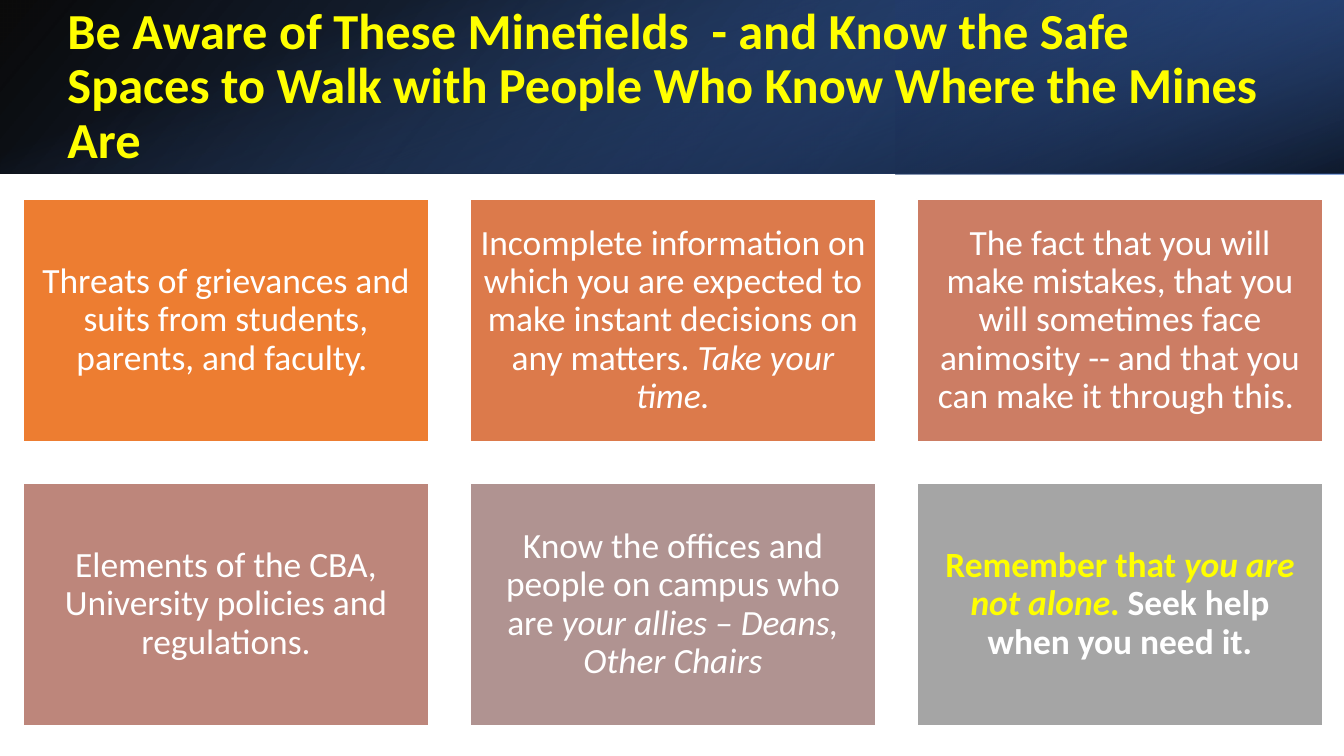
from dataclasses import dataclass

from lxml import etree
from pptx import Presentation
from pptx import util as u
from pptx.dml.color import RGBColor
from pptx.enum import shapes, text
from pptx.oxml.ns import qn

PX = 914400 / 134.4
WIDTH, HEIGHT = 1344, 756
BAND_HEIGHT = 174
FONT = "Calibri"
WHITE, YELLOW = "FFFFFF", "FFFF00"


@dataclass
class Stop:
    position: float
    color: str
    alpha: int


@dataclass
class Band:
    left: int
    top: int
    width: int
    height: int
    rotation: int
    flipped: bool
    angle: int
    stops: tuple[Stop, Stop]


@dataclass
class Span:
    words: str
    color: str = WHITE
    bold: bool = False
    italic: bool = False


@dataclass
class Card:
    fill: str
    spans: list[Span]


BANDS = [
    Band(0, 0, WIDTH, BAND_HEIGHT, 0, True, 140,
         (Stop(0, "000000", 96), Stop(1, "2F5597", 100))),
    Band(896, 0, 448, BAND_HEIGHT, 180, True, 320,
         (Stop(0.19, "203864", 68), Stop(1, "4472C4", 79))),
    # Upright strip turned a quarter to lie across the header
    Band(585, -585, BAND_HEIGHT, WIDTH, 90, False, 340,
         (Stop(0.23, "4472C4", 0), Stop(0.99, "000000", 74))),
]

TITLE = ("Be Aware of These Minefields  - and Know the Safe Spaces to Walk "
         "with People Who Know Where the Mines Are ")

CARDS = [
    Card("ED7D31", [Span("Threats of grievances and suits from students, "
                         "parents, and faculty. ")]),
    Card("DC7A4B", [Span("Incomplete information on which you are expected to "
                         "make instant decisions on any matters. "),
                    Span("Take your time.", italic=True)]),
    Card("CC7D64", [Span("The fact that you will make mistakes, that you will "
                         "sometimes face animosity -- and that you can make it "
                         "through this. ")]),
    Card("BD867B", [Span("Elements of the CBA, University policies and "
                         "regulations.")]),
    Card("B09391", [Span("Know the offices and people on campus who are "),
                    Span("your allies – Deans, Other Chairs", italic=True)]),
    Card("A5A5A5", [Span("Remember that ", YELLOW, bold=True),
                    Span("you are not alone", YELLOW, bold=True, italic=True),
                    Span(".", YELLOW, bold=True),
                    Span(" Seek help when you need it.", bold=True)]),
]
COLUMNS = 3
CARD_LEFT, CARD_TOP = 23, 199
CARD_WIDTH, CARD_HEIGHT = 406, 243
COLUMN_STEP, ROW_STEP = 447, 284


def px(length: int) -> u.Emu:
    return u.Emu(round(length * PX))


def rgb(color: str) -> RGBColor:
    return RGBColor.from_string(color)


def add_rectangle(page, left: int, top: int, width: int, height: int):
    shape = page.shapes.add_shape(shapes.MSO_SHAPE.RECTANGLE, px(left), px(top),
                                  px(width), px(height))
    shape.shadow.inherit = False
    return shape


def add_text(para, words: str, *, size: int, color: str = WHITE,
             bold: bool = False, italic: bool = False) -> None:
    run = para.add_run()
    run.text = words
    run.font.name = FONT
    run.font.size = u.Pt(size)
    run.font.bold = bold
    run.font.italic = italic
    run.font.color.rgb = rgb(color)


def draw_band(page, band: Band) -> None:
    shape = add_rectangle(page, band.left, band.top, band.width, band.height)
    shape.rotation = band.rotation
    shape.line.fill.background()
    if band.flipped:
        shape._element.spPr.find(qn("a:xfrm")).set("flipH", "1")
    shape.fill.gradient()
    shape.fill.gradient_angle = 360 - band.angle
    for target, stop in zip(shape.fill.gradient_stops, band.stops):
        target.position = stop.position
        target.color.rgb = rgb(stop.color)
    # Transparency of each gradient stop
    for node, stop in zip(shape._element.spPr.iter(qn("a:srgbClr")), band.stops):
        etree.SubElement(node, qn("a:alpha")).set("val", str(stop.alpha * 1000))


def draw_title(page) -> None:
    title = page.shapes.title
    title.left, title.top = px(54), px(39)
    title.width, title.height = px(1228), px(97)
    frame = title.text_frame
    frame.word_wrap = True
    frame.auto_size = text.MSO_AUTO_SIZE.NONE
    frame.vertical_anchor = text.MSO_ANCHOR.MIDDLE
    para = frame.paragraphs[0]
    para.alignment = text.PP_ALIGN.LEFT
    para.line_spacing = 0.9
    add_text(para, TITLE, size=27, color=YELLOW, bold=True)
    # Bring the title in front of the header bands
    page.shapes._spTree.append(title._element)


def draw_card(page, card: Card, left: int, top: int) -> None:
    box = add_rectangle(page, left, top, CARD_WIDTH, CARD_HEIGHT)
    box.fill.solid()
    box.fill.fore_color.rgb = rgb(card.fill)
    box.line.color.rgb = rgb(WHITE)
    box.line.width = u.Pt(1)
    frame = box.text_frame
    frame.word_wrap = True
    frame.vertical_anchor = text.MSO_ANCHOR.MIDDLE
    frame.margin_left = frame.margin_right = px(10)
    frame.margin_top = frame.margin_bottom = px(10)
    para = frame.paragraphs[0]
    para.alignment = text.PP_ALIGN.CENTER
    para.line_spacing = 0.9
    for span in card.spans:
        add_text(para, span.words, size=19, color=span.color,
                 bold=span.bold, italic=span.italic)


def main() -> None:
    deck = Presentation()
    deck.slide_width, deck.slide_height = px(WIDTH), px(HEIGHT)
    page = deck.slides.add_slide(deck.slide_layouts[5])

    # Header
    for band in BANDS:
        draw_band(page, band)
    draw_title(page)

    # Grid of cards
    for index, card in enumerate(CARDS):
        row, column = divmod(index, COLUMNS)
        draw_card(page, card, CARD_LEFT + column * COLUMN_STEP,
                  CARD_TOP + row * ROW_STEP)

    deck.save("out.pptx")


if __name__ == "__main__":
    main()
